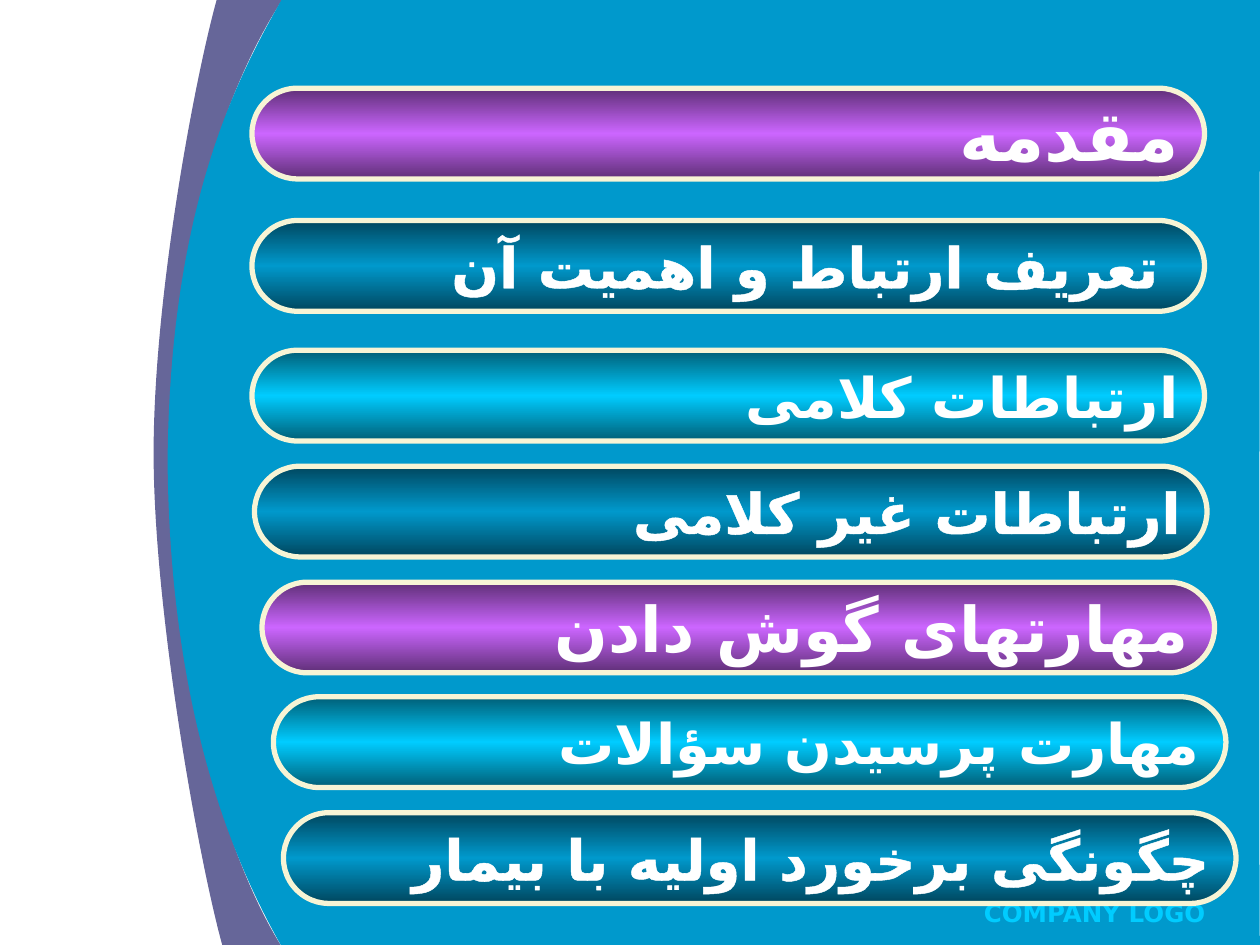
import dataclasses

import pptx
import pptx.dml.color
import pptx.enum.shapes
import pptx.enum.text
import pptx.oxml
import pptx.oxml.ns
import pptx.util

Inches = pptx.util.Inches
Pt = pptx.util.Pt
qn = pptx.oxml.ns.qn
DRAWING = pptx.oxml.ns.nsdecls("a")


@dataclasses.dataclass(frozen=True)
class Theme:
    font: str = "DejaVu Sans"
    band: str = "666699"
    panel: str = "0099CC"
    purple: str = "CC66FF"
    blue: str = "0099CC"
    cyan: str = "00CCFF"
    border: str = "F7F4D5"
    white: str = "FFFFFF"
    edge_shade: int = 46275
    border_width: int = 3
    outline_width: float = 1.45
    huge: int = 40
    large: int = 36
    normal: int = 32
    footer: int = 14


THEME = Theme()
BAR_WIDTH, BAR_HEIGHT = 7.56, 0.72

# text, left, top, colour, type size
TOPICS = [
    ("مقدمه", 2, 0.7, THEME.purple, THEME.huge),
    (" تعریف ارتباط و اهمیت آن", 2, 1.75, THEME.blue, THEME.normal),
    ("ارتباطات کلامی", 2, 2.78, THEME.cyan, THEME.normal),
    ("ارتباطات غیر کلامی", 2.02, 3.7, THEME.blue, THEME.normal),
    ("مهارتهای گوش دادن", 2.08, 4.62, THEME.purple, THEME.large),
    ("مهارت پرسیدن سؤالات", 2.17, 5.53, THEME.cyan, THEME.normal),
    ("چگونگی برخورد اولیه با بیمار", 2.25, 6.45, THEME.blue, THEME.normal),
]

# Hundredths of an inch; each curve is two control points and an end point.
BACKDROP = [
    (THEME.band, (224, 0), [
        [(164, 92), (134, 238), (134, 364)],
        [(135, 489), (165, 658), (224, 752)],
        [(225, 752), (193, 752), (177, 752)],
        [(158, 684), (123, 490), (122, 365)],
        [(121, 239), (155, 61), (172, 0)],
        [(189, 0), (224, 0), (224, 0)],
    ]),
    (THEME.panel, (1000, -1), [
        [(1000, -1), (999, 751), (1000, 751)],
        [(1001, 752), (240, 752), (224, 752)],
        [(193, 697), (135, 580), (133, 366)],
        [(135, 160), (190, 59), (224, -1)],
        [(241, -1), (1000, -1), (1000, -1)],
    ]),
]


def rgb(value):
    return pptx.dml.color.RGBColor.from_string(value)


def bend_lines(shape):
    """Turn each three line segments into one cubic curve."""
    lines = list(shape._element.iter(qn("a:lnTo")))
    for first in range(0, len(lines) - 2, 3):
        curve = pptx.oxml.parse_xml(f"<a:cubicBezTo {DRAWING}/>")
        lines[first].addprevious(curve)
        for line in lines[first:first + 3]:
            curve.append(line[0])
            line.getparent().remove(line)


def add_backdrop(slide, color, start, curves):
    builder = slide.shapes.build_freeform(*start, scale=Inches(0.01))
    builder.add_line_segments([point for curve in curves for point in curve], close=True)
    shape = builder.convert_to_shape()
    bend_lines(shape)
    shape.shadow.inherit = False
    shape.fill.solid()
    shape.fill.fore_color.rgb = rgb(color)
    shape.line.fill.background()


def style_font(font, size, color):
    font.name = THEME.font
    font.size = Pt(size)
    font.bold = True
    font.color.rgb = rgb(color)


def fill_with_sheen(shape, color):
    """Fill from shaded edges to the plain colour in the middle."""
    shape.fill.gradient()
    shape.fill.gradient_angle = 270
    stops = shape._element.spPr.find(".//" + qn("a:gsLst"))
    for stop in list(stops):
        stops.remove(stop)
    shade = f'<a:gamma/><a:shade val="{THEME.edge_shade}"/><a:invGamma/>'
    for position, change in ((0, shade), (50000, ""), (100000, shade)):
        stops.append(pptx.oxml.parse_xml(
            f'<a:gs {DRAWING} pos="{position}">'
            f'<a:srgbClr val="{color}">{change}</a:srgbClr></a:gs>'))


def add_topic(slide, text, left, top, color, size):
    bar = slide.shapes.add_shape(
        pptx.enum.shapes.MSO_SHAPE.ROUNDED_RECTANGLE,
        Inches(left), Inches(top), Inches(BAR_WIDTH), Inches(BAR_HEIGHT))
    bar.adjustments[0] = 0.5
    bar.shadow.inherit = False
    fill_with_sheen(bar, color)
    bar.line.color.rgb = rgb(THEME.border)
    bar.line.width = Pt(THEME.border_width)

    frame = bar.text_frame
    frame.word_wrap = False
    frame.vertical_anchor = pptx.enum.text.MSO_ANCHOR.MIDDLE
    paragraph = frame.paragraphs[0]
    paragraph.text = text
    paragraph.alignment = pptx.enum.text.PP_ALIGN.RIGHT
    properties = paragraph._p.get_or_add_pPr()
    properties.set("rtl", "1")
    style_font(paragraph.font, size, THEME.white)
    font_properties = properties.find(qn("a:defRPr"))
    font_properties.append(pptx.oxml.parse_xml(
        f'<a:cs {DRAWING} typeface="{THEME.font}"/>'))
    if color == THEME.blue:
        font_properties.insert(0, pptx.oxml.parse_xml(
            f'<a:ln {DRAWING} w="{Pt(THEME.outline_width)}"><a:solidFill>'
            f'<a:srgbClr val="{THEME.white}"/></a:solidFill></a:ln>'))


def add_footer(slide):
    box = slide.shapes.add_textbox(Inches(7.71), Inches(7.08), Inches(2.04), Inches(0.33))
    box.text_frame.word_wrap = True
    paragraph = box.text_frame.paragraphs[0]
    paragraph.text = "COMPANY LOGO"
    style_font(paragraph.font, THEME.footer, THEME.cyan)


def main():
    presentation = pptx.Presentation()
    presentation.slide_width = Inches(10)
    presentation.slide_height = Inches(7.5)
    slide = presentation.slides.add_slide(presentation.slide_layouts[6])
    for outline in BACKDROP:
        add_backdrop(slide, *outline)
    add_footer(slide)
    for topic in TOPICS:
        add_topic(slide, *topic)
    presentation.save("out.pptx")


if __name__ == "__main__":
    main()
